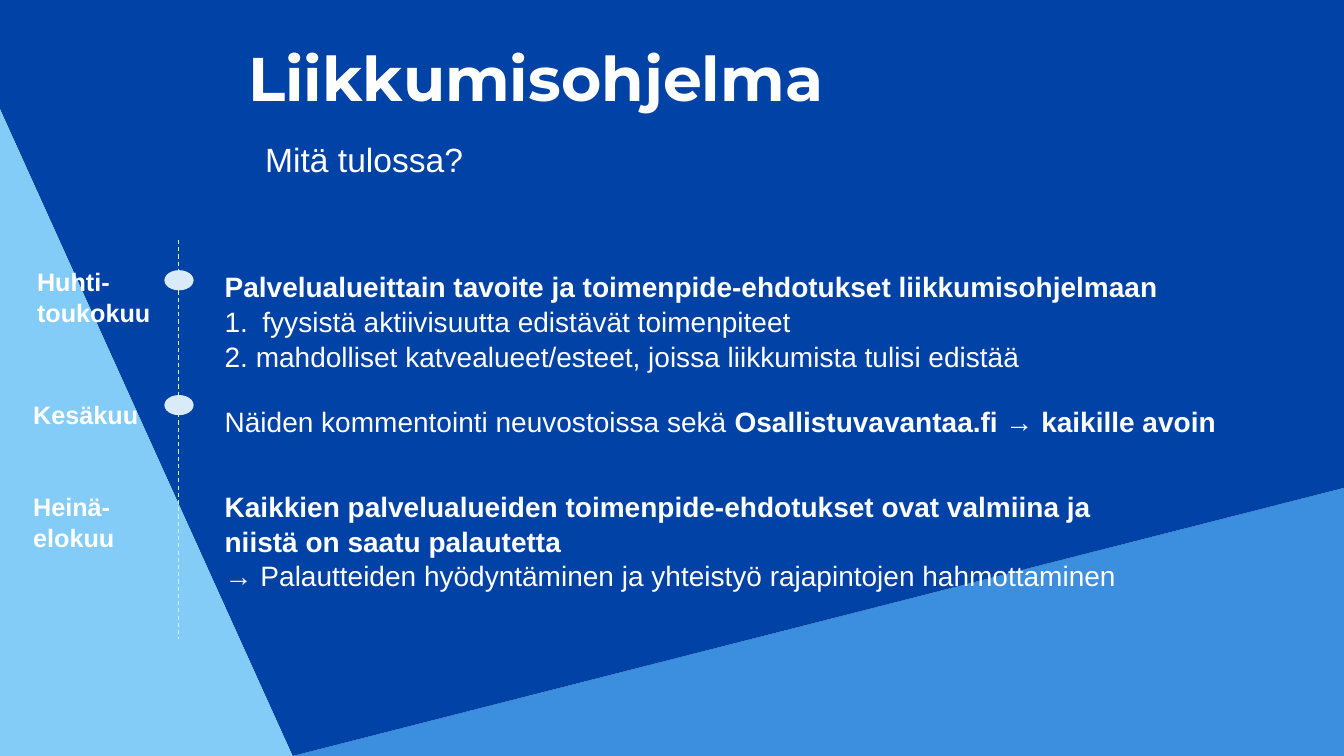
from dataclasses import dataclass
from lxml.etree import SubElement
from pptx import Presentation
from pptx.dml.color import RGBColor
from pptx.enum.dml import MSO_LINE
from pptx.enum.shapes import MSO_CONNECTOR, MSO_SHAPE
from pptx.enum.text import MSO_ANCHOR, PP_ALIGN
from pptx.oxml.ns import qn
from pptx.util import Pt

COLORS = {"deep": "0042A5", "mid": "3C8EDE", "light": "84CCF8",
          "pale": "D9EAF8", "white": "FFFFFF"}
WIDE, HIGH = 960, 540
LEAD = 1.04


@dataclass
class Line:
    text: str
    bold: bool = False
    gap: float = 0
    num: bool = False
    tail: str = ""  # bold ending of the line


@dataclass
class Block:
    box: tuple[float, float, float, float]
    size: float
    lines: list[Line]
    wrap: bool = True


@dataclass
class Field:
    color: str
    points: list[tuple[float, float]]


# Background fields meet at the foot of the slide
LEFT, FOOT, RIGHT = (0, 78), (209, HIGH), (WIDE, 348.5)
FIELDS = [
    Field("mid", [FOOT, (WIDE, HIGH), RIGHT]),
    Field("deep", [LEFT, FOOT, RIGHT, (WIDE, 0), (0, 0)]),
    Field("light", [LEFT, FOOT, (0, HIGH)]),
]

BLOCKS = [
    # Plans
    Block((153.4, 188, 744.5, 150), 20, [
        Line("Palvelualueittain tavoite ja toimenpide-ehdotukset liikkumisohjelmaan", True),
        Line("fyysistä aktiivisuutta edistävät toimenpiteet", num=True),
        Line("2. mahdolliset katvealueet/esteet, joissa liikkumista tulisi edistää"),
        Line("Näiden kommentointi neuvostoissa sekä ", gap=21.8,
             tail="Osallistuvavantaa.fi → kaikille avoin"),
    ]),
    Block((153.4, 344.9, 666.7, 80), 20, [
        Line("Kaikkien palvelualueiden toimenpide-ehdotukset ovat valmiina ja "
             "niistä on saatu palautetta", True),
        Line("→ Palautteiden hyödyntäminen ja yhteistyö rajapintojen hahmottaminen"),
    ]),
    # Months
    Block((19.4, 185.8, 96.5, 51), 18,
          [Line("Huhti-", True), Line("toukokuu", True)], wrap=False),
    Block((16.6, 280.8, 90, 116.6), 18,
          [Line("Kesäkuu", True), Line("Heinä-", True, gap=43.2),
           Line("elokuu", True)], wrap=False),
]


def tint(name: str) -> RGBColor:
    return RGBColor.from_string(COLORS[name])


def place(shape, box: tuple[float, float, float, float]) -> None:
    shape.left, shape.top, shape.width, shape.height = map(Pt, box)


def style(font, size: float, bold: bool, face: str = "Arial") -> None:
    font.name, font.size, font.bold = face, Pt(size), bold
    font.color.rgb = tint("white")


def paint(shape, color: str) -> None:
    shape.shadow.inherit = False
    shape.fill.solid()
    shape.fill.fore_color.rgb = tint(color)
    shape.line.fill.background()


def draw_field(slide, field: Field) -> None:
    first, *rest = [(Pt(x), Pt(y)) for x, y in field.points]
    form = slide.shapes.build_freeform(*first)
    form.add_line_segments(rest, close=True)
    paint(form.convert_to_shape(), field.color)


def draw_head(shape, text: str, box: tuple[float, float, float, float],
              size: float, bold: bool, face: str, anchor: MSO_ANCHOR) -> None:
    place(shape, box)
    frame = shape.text_frame
    frame.text = text
    frame.word_wrap = True
    frame.vertical_anchor = anchor
    para = frame.paragraphs[0]
    para.alignment = PP_ALIGN.LEFT
    para.space_before = Pt(0)
    para.line_spacing = 0.9 if bold else 1.0
    style(para.runs[0].font, size, bold, face)


def draw_block(slide, block: Block) -> None:
    frame = slide.shapes.add_textbox(*map(Pt, block.box)).text_frame
    frame.word_wrap = block.wrap
    frame.text = "\n".join(line.text for line in block.lines)
    for para, line in zip(frame.paragraphs, block.lines):
        para.line_spacing = LEAD
        if line.gap:
            para.space_before = Pt(line.gap)
        if line.num:
            props = para._p.get_or_add_pPr()
            props.set("marL", str(Pt(27)))
            props.set("indent", str(Pt(-27)))
            SubElement(props, qn("a:buFont"), typeface="Arial")
            SubElement(props, qn("a:buAutoNum"), type="arabicPeriod")
        style(para.runs[0].font, block.size, line.bold)
        if line.tail:
            run = para.add_run()
            run.text = line.tail
            style(run.font, block.size, True)


def draw_axis(slide, x: float, top: float, end: float) -> None:
    axis = slide.shapes.add_connector(
        MSO_CONNECTOR.STRAIGHT, Pt(x), Pt(top), Pt(x), Pt(end))
    axis.line.color.rgb = tint("pale")
    axis.line.width = Pt(0.75)
    axis.line.dash_style = MSO_LINE.DASH
    SubElement(axis._element.spPr, qn("a:effectLst"))


def main() -> None:
    deck = Presentation()
    deck.slide_width, deck.slide_height = Pt(WIDE), Pt(HIGH)
    slide = deck.slides.add_slide(deck.slide_layouts[0])
    title, sub = slide.placeholders
    for field in FIELDS:
        draw_field(slide, field)

    # Headings stand in front of the fields
    for head in (sub, title):
        slide.shapes._spTree.append(head._element)
    draw_head(title, "Liikkumisohjelma", (170, 31, 649.4, 77.8), 44, True,
              "Montserrat", MSO_ANCHOR.TOP)
    draw_head(sub, "Mitä tulossa?", (182.2, 93.6, 213.8, 39.6), 24, False,
              "Arial", MSO_ANCHOR.MIDDLE)

    # Timeline
    draw_axis(slide, 127.8, 171.4, 456.5)
    for top in (193, 282.2):
        dot = slide.shapes.add_shape(
            MSO_SHAPE.OVAL, Pt(117.4), Pt(top), Pt(20.9), Pt(14.4))
        paint(dot, "pale")
    for block in BLOCKS:
        draw_block(slide, block)
    deck.save("out.pptx")


if __name__ == "__main__":
    main()
